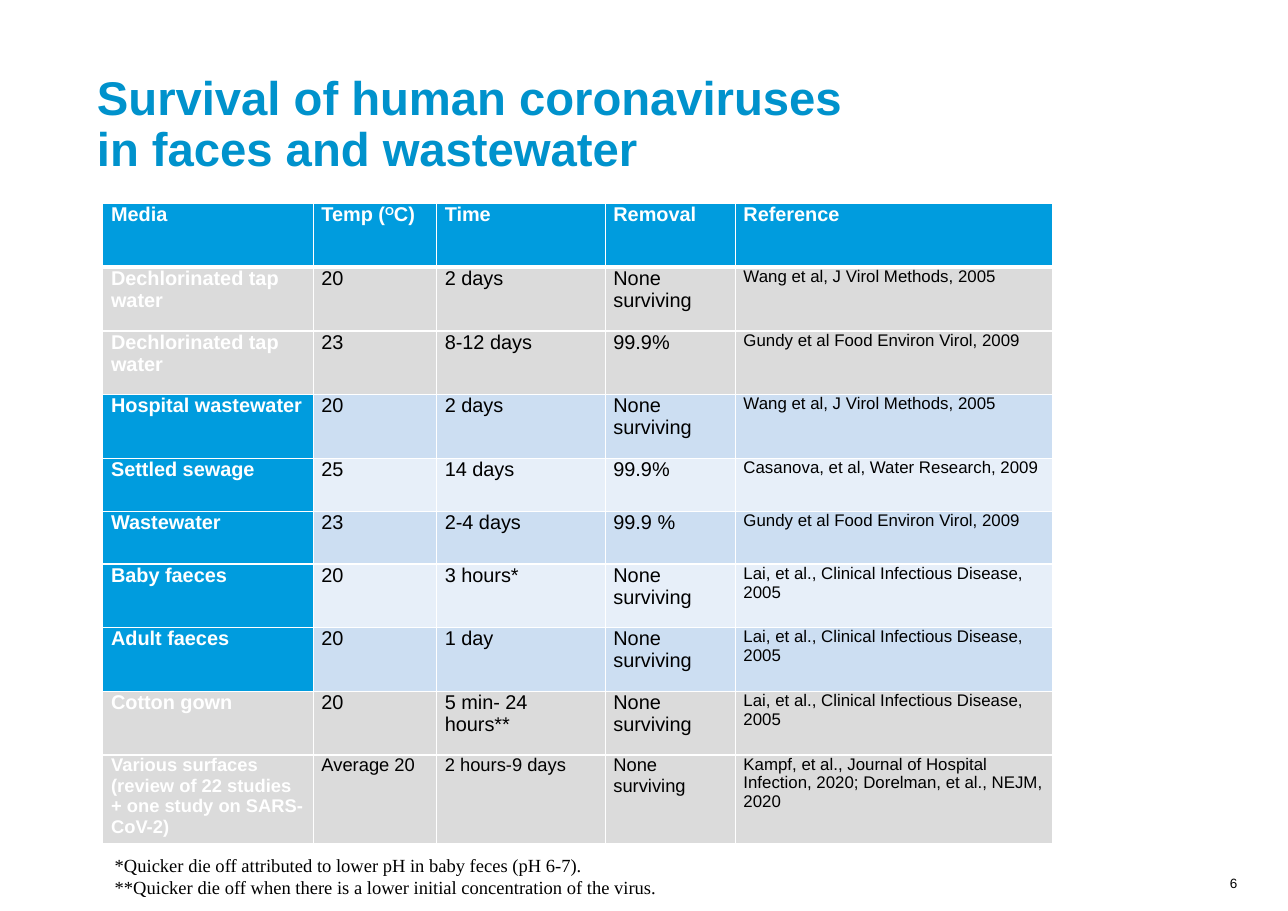
from dataclasses import dataclass

import lxml.etree
import pptx
import pptx.dml.color
import pptx.enum.text
import pptx.oxml.ns
import pptx.util

Pt = pptx.util.Pt
ALIGN = pptx.enum.text.PP_ALIGN
ANCHOR = pptx.enum.text.MSO_ANCHOR


@dataclass(frozen=True)
class Theme:
    sans: str = "Arial"
    serif: str = "Times New Roman"
    title_blue: str = "0092CC"
    strong_blue: str = "009CDE"
    mid_blue: str = "CCDEF2"
    pale_blue: str = "E7EFF9"
    grey: str = "DBDBDB"
    white: str = "FFFFFF"
    black: str = "000000"
    title_size: float = 30.9
    body_size: float = 13
    compact_size: float = 12
    reference_size: float = 11
    footnote_size: float = 12.1
    number_size: float = 8.8


THEME = Theme()

COLUMN_WIDTHS = [137.5, 80.6, 110.2, 85, 207.4]
TALL, SHORT, LAST = 41.6, 34.6, 58
HEADINGS = ["Media", "Temp (OC)", "Time", "Removal", "Reference"]
WANG = "Wang et al, J Virol Methods, 2005"
GUNDY = "Gundy et al Food Environ Virol, 2009"
LAI = "Lai, et al., Clinical Infectious Disease, 2005"
GONE = "None surviving"
STUDIES = [
    (THEME.grey, TALL, ["Dechlorinated tap water", "20", "2 days", GONE, WANG]),
    (THEME.grey, TALL, ["Dechlorinated tap water", "23", "8-12 days", "99.9%", GUNDY]),
    (THEME.mid_blue, TALL, ["Hospital wastewater", "20", "2 days", GONE, WANG]),
    (THEME.pale_blue, SHORT, ["Settled sewage", "25", "14 days", "99.9%",
                              "Casanova, et al, Water Research, 2009"]),
    (THEME.mid_blue, SHORT, ["Wastewater", "23", "2-4 days", "99.9 %", GUNDY]),
    (THEME.pale_blue, TALL, ["Baby faeces", "20", "3 hours*", GONE, LAI]),
    (THEME.mid_blue, TALL, ["Adult faeces", "20", "1 day", GONE, LAI]),
    (THEME.grey, TALL, ["Cotton gown", "20", "5 min- 24 hours**", GONE, LAI]),
    (THEME.grey, LAST, ["Various surfaces (review of 22 studies + one study on SARS-CoV-2)",
                        "Average 20", "2 hours-9 days", GONE,
                        "Kampf, et al., Journal of Hospital Infection, 2020; "
                        "Dorelman, et al., NEJM, 2020"]),
]


def style_run(run, size, color, font=THEME.sans, bold=False):
    run.font.size = Pt(size)
    run.font.name = font
    run.font.bold = bold
    run.font.color.rgb = pptx.dml.color.RGBColor.from_string(color)


def add_text(slide, box, text, size, color, font=THEME.sans, bold=False,
             align=ALIGN.LEFT, anchor=ANCHOR.MIDDLE, margins=(8, 4), spacing=1.0):
    frame = slide.shapes.add_textbox(*map(Pt, box)).text_frame
    frame.word_wrap = True
    frame.vertical_anchor = anchor
    frame.margin_left = frame.margin_right = Pt(margins[0])
    frame.margin_top = frame.margin_bottom = Pt(margins[1])
    frame.text = text
    for paragraph in frame.paragraphs:
        paragraph.alignment = align
        paragraph.line_spacing = spacing
        for run in paragraph.runs:
            style_run(run, size, color, font, bold)


def add_borders(cell, widths):
    properties = cell._tc.get_or_add_tcPr()
    qn = pptx.oxml.ns.qn
    for side, width in widths.items():
        line = lxml.etree.SubElement(properties, qn(f"a:ln{side}"), w=str(Pt(width)))
        fill = lxml.etree.SubElement(line, qn("a:solidFill"))
        lxml.etree.SubElement(fill, qn("a:srgbClr"), val=THEME.white)


def fill_cell(cell, text, fill, size, color, bold, borders):
    add_borders(cell, borders)
    cell.fill.solid()
    cell.fill.fore_color.rgb = pptx.dml.color.RGBColor.from_string(fill)
    cell.margin_left = cell.margin_right = Pt(5.4)
    cell.margin_top = cell.margin_bottom = 0
    cell.text_frame.text = text
    style_run(cell.text_frame.paragraphs[0].runs[0], size, color, bold=bold)


def raise_degree(cell):
    paragraph = cell.text_frame.paragraphs[0]
    paragraph.runs[0].text = "Temp ("
    for text in ("O", "C)"):
        style_run(paragraph.add_run(), THEME.body_size, THEME.white, bold=True)
        paragraph.runs[-1].text = text
    paragraph.runs[1]._r.get_or_add_rPr().set("baseline", "30000")


def add_survival_table(slide):
    rows = [(THEME.strong_blue, TALL, HEADINGS)] + STUDIES
    heights = [height for _, height, _ in rows]
    table = slide.shapes.add_table(
        len(rows), len(HEADINGS), Pt(67.2), Pt(133.2),
        Pt(sum(COLUMN_WIDTHS)), Pt(sum(heights))).table
    for column, width in zip(table.columns, COLUMN_WIDTHS):
        column.width = Pt(width)
    for r, (band, height, texts) in enumerate(rows):
        table.rows[r].height = Pt(height)
        borders = {"L": 1, "R": 1, "T": 3 if r == 1 else 1, "B": 3 if r == 0 else 1}
        row_size = THEME.compact_size if height == LAST else THEME.body_size
        for c, text in enumerate(texts):
            heading = r == 0 or c == 0
            is_reference = r > 0 and c == len(HEADINGS) - 1
            fill = THEME.strong_blue if heading and band != THEME.grey else band
            fill_cell(table.cell(r, c), text, fill,
                      THEME.reference_size if is_reference else row_size,
                      THEME.white if heading else THEME.black, heading, borders)
    raise_degree(table.cell(0, 1))


def main():
    deck = pptx.Presentation()
    deck.slide_width, deck.slide_height = Pt(841.68), Pt(595.44)
    slide = deck.slides.add_slide(deck.slide_layouts[6])
    add_text(slide, (788.4, 571.7, 20.2, 15.8), "6", THEME.number_size, THEME.black,
             align=ALIGN.RIGHT, anchor=ANCHOR.TOP, margins=(0, 0))
    add_text(slide, (55.4, 51.1, 525, 62.6),
             "Survival of human coronaviruses in faces and wastewater",
             THEME.title_size, THEME.title_blue, bold=True, spacing=0.9)
    add_survival_table(slide)
    add_text(slide, (67, 553.7, 700, 37.4),
             "*Quicker die off attributed to lower pH in baby feces (pH 6-7).\n"
             "**Quicker die off when there is a lower initial concentration of the virus.",
             THEME.footnote_size, THEME.black, font=THEME.serif)
    deck.save("out.pptx")


if __name__ == "__main__":
    main()
